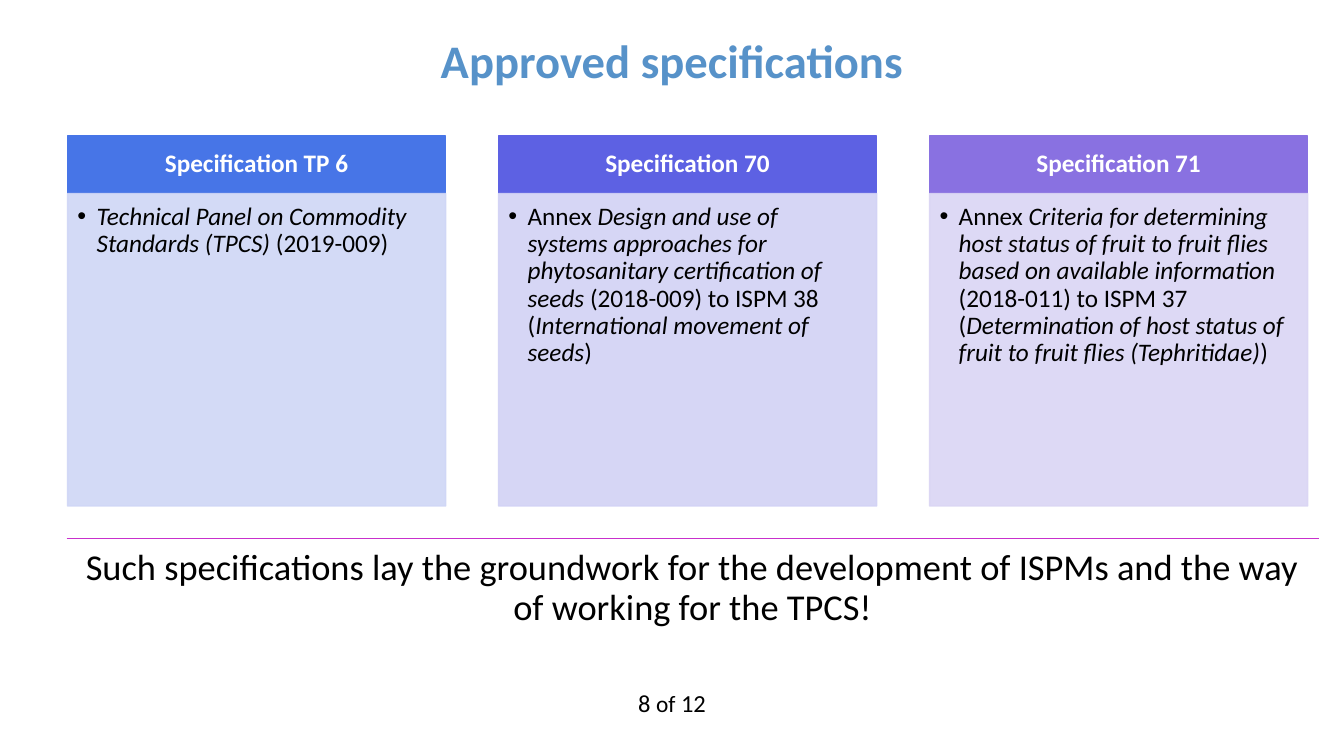
"""Slide listing the approved specifications in three columns."""
from lxml import etree
from pptx import Presentation
from pptx.dml.color import RGBColor
from pptx.enum import shapes, text
from pptx.oxml import ns
from pptx.util import Inches, Pt

COLORS = {"title": "5792C9", "rule": "C830CC", "white": "FFFFFF", "black": "000000"}
COLUMNS = [
    ("Specification TP 6", "4775E7", "CFD6F6",
     [("Technical Panel on Commodity Standards (TPCS)", True), (" (2019-009)", False)]),
    ("Specification 70", "5D61E3", "D2D2F5",
     [("Annex ", False),
      ("Design and use of systems approaches for phytosanitary certification of seeds ", True),
      ("(2018-009) to ISPM 38 (", False), ("International movement of seeds", True), (")", False)]),
    ("Specification 71", "8971E1", "DAD5F4",
     [("Annex ", False),
      ("Criteria for determining host status of fruit to fruit flies based on available information ", True),
      ("(2018-011) to ISPM 37 (", False),
      ("Determination of host status of fruit to fruit flies (Tephritidae)", True), (")", False)]),
]


def write(box, runs, size, color, insets, bold=False, align=text.PP_ALIGN.CENTER,
          anchor=text.MSO_ANCHOR.TOP, spacing=0.9):
    """Fill a box with one paragraph of (words, italic) runs."""
    frame = box.text_frame
    frame.auto_size = text.MSO_AUTO_SIZE.NONE
    frame.word_wrap = True
    frame.vertical_anchor = anchor
    frame.margin_left, frame.margin_top, frame.margin_right, frame.margin_bottom = map(Inches, insets)
    paragraph = frame.paragraphs[0]
    paragraph.alignment = align
    paragraph.line_spacing = spacing
    for words, italic in runs:
        run = paragraph.add_run()
        run.text = words
        run.font.name = "Calibri"
        run.font.size = Pt(size)
        run.font.bold = bold
        run.font.italic = italic
        run.font.color.rgb = RGBColor.from_string(color)
    return paragraph


def add_panel(left, top, width, height, color):
    """Add a rectangle whose fill and outline share one colour."""
    panel = slide.shapes.add_shape(shapes.MSO_SHAPE.RECTANGLE, Inches(left), Inches(top),
                                   Inches(width), Inches(height))
    panel.shadow.inherit = False
    panel.fill.solid()
    panel.fill.fore_color.rgb = RGBColor.from_string(color)
    panel.line.color.rgb = RGBColor.from_string(color)
    panel.line.width = Pt(1)
    return panel


deck = Presentation()
deck.slide_width, deck.slide_height = Inches(13.33), Inches(7.5)
slide = deck.slides.add_slide(deck.slide_layouts[5])

title = slide.shapes.title
title.left, title.top, title.width, title.height = 0, 0, deck.slide_width, Inches(1.25)
write(title, [("Approved specifications", False)], 33.3, COLORS["title"], (0.1, 0.05, 0.1, 0.05),
      bold=True, anchor=text.MSO_ANCHOR.MIDDLE)

for index, (heading, strong, pale, description) in enumerate(COLUMNS):
    left = 0.67 + index * 4.275
    header = add_panel(left, 1.35, 3.75, 0.57, strong)
    write(header, [(heading, False)], 18, COLORS["white"], (0.14, 0.08, 0.14, 0.08),
          bold=True, anchor=text.MSO_ANCHOR.MIDDLE)
    body = add_panel(left, 1.92, 3.75, 3.1, pale)
    for color_element in body._element.spPr.iter(ns.qn("a:srgbClr")):
        etree.SubElement(color_element, ns.qn("a:alpha"), val="90000")
    item = write(body, description, 18, COLORS["black"], (0.1, 0.1, 0.14, 0.16),
                 align=text.PP_ALIGN.LEFT)
    properties = item._p.get_or_add_pPr()
    properties.set("marL", str(Inches(0.19)))
    properties.set("indent", str(Inches(-0.19)))
    etree.SubElement(properties, ns.qn("a:buFont"), typeface="Arial")
    etree.SubElement(properties, ns.qn("a:buChar"), char="•")

page_number = slide.shapes.add_textbox(Inches(6.07), Inches(6.75), Inches(1.19), Inches(0.46))
counter = write(page_number, [("8 ", False), ("of", False), (" 12", False)], 17.5,
                COLORS["black"], (0.17, 0.08, 0.17, 0.08), spacing=1.0)
counter.runs[1].font.size = Pt(16.7)
page_number.text_frame.word_wrap = False

rule = slide.shapes.add_connector(shapes.MSO_CONNECTOR.STRAIGHT, Inches(0.66), Inches(5.34),
                                  Inches(13.08), Inches(5.34))
rule.line.color.rgb = RGBColor.from_string(COLORS["rule"])
rule.line.width = Pt(1)
etree.SubElement(rule._element.spPr, ns.qn("a:effectLst"))

conclusion = slide.shapes.add_textbox(Inches(0.66), Inches(5.34), Inches(12.42), Inches(1.25))
write(conclusion, [("Such specifications lay the groundwork for the development of ISPMs "
                    "and the way of working for the TPCS!", False)],
      26, COLORS["black"], (0.11, 0.11, 0.11, 0.11))

deck.save("out.pptx")
